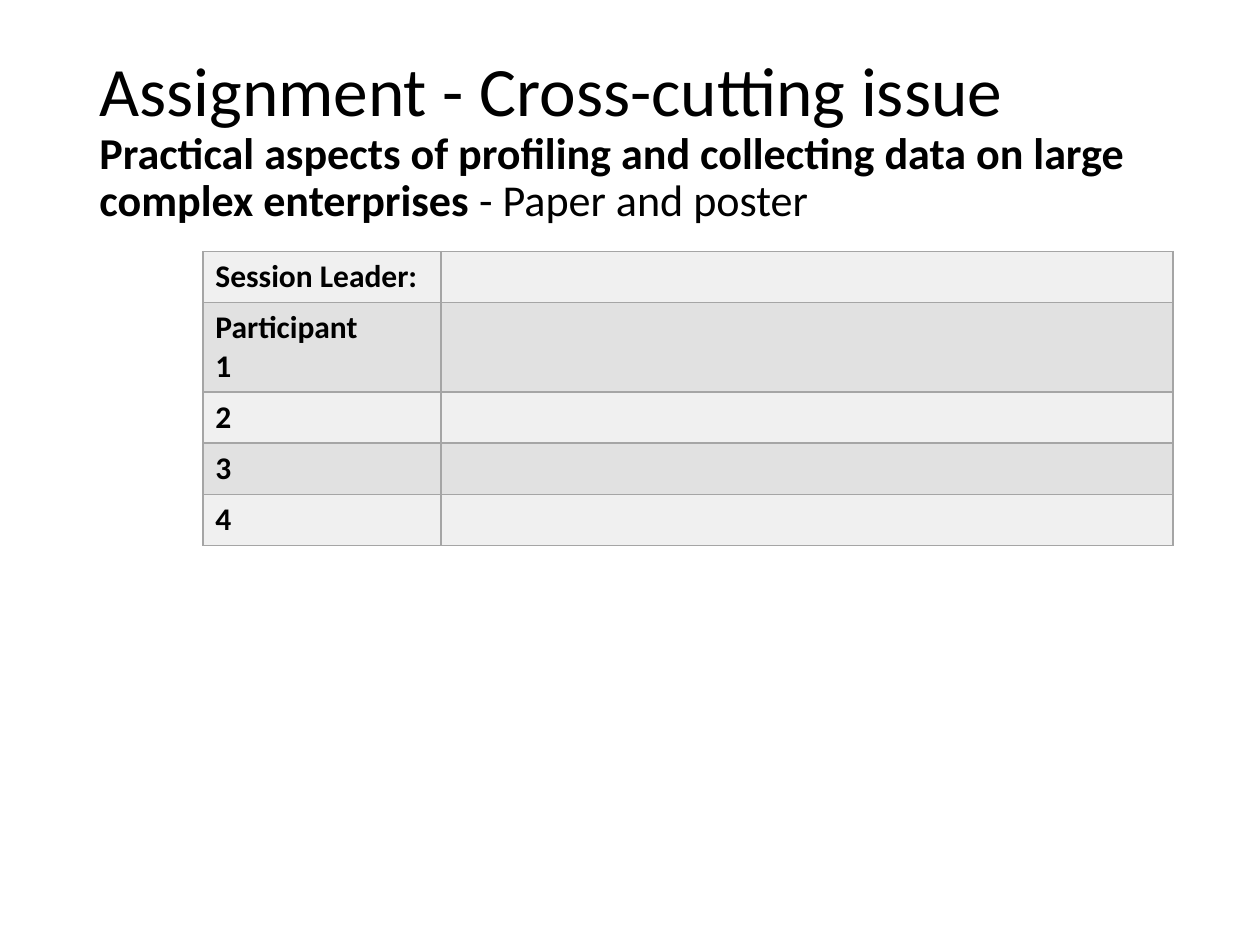
from dataclasses import dataclass

from lxml.etree import SubElement
from pptx import Presentation
from pptx.dml.color import RGBColor
from pptx.enum.text import MSO_ANCHOR, MSO_AUTO_SIZE, PP_ALIGN
from pptx.oxml.ns import qn
from pptx.util import Cm, Pt

FONT = "Calibri"
COLORS = {"text": "000000", "border": "A5A5A5", "light": "F0F0F0", "dark": "E1E1E1"}


@dataclass
class Row:
    label: list[str]
    height: float = 1.03


ROWS = [
    Row(["Session Leader:"]),
    Row(["Participant", "1"], 1.8),
    Row(["2"]),
    Row(["3"]),
    Row(["4"]),
]
COL_WIDTHS = [4.8, 14.76]


def set_font(font, size: float, bold: bool = False) -> None:
    font.name = FONT
    font.size = Pt(size)
    font.bold = bold
    font.color.rgb = RGBColor.from_string(COLORS["text"])


def add_borders(cell) -> None:
    tc_pr = cell._tc.get_or_add_tcPr()
    for side in ("lnL", "lnR", "lnT", "lnB"):
        ln = SubElement(tc_pr, qn(f"a:{side}"), w=str(Pt(1)))
        fill = SubElement(ln, qn("a:solidFill"))
        SubElement(fill, qn("a:srgbClr"), val=COLORS["border"])


def fill_title(s) -> None:
    title = s.shapes.title
    title.left, title.top, title.width, title.height = Cm(1.75), Cm(1.01), Cm(21.9), Cm(3.68)
    tf = title.text_frame
    tf.word_wrap = True
    tf.auto_size = MSO_AUTO_SIZE.NONE
    tf.vertical_anchor = MSO_ANCHOR.MIDDLE
    p = tf.paragraphs[0]
    p.alignment = PP_ALIGN.LEFT
    p.line_spacing = 0.9
    set_font(p.font, 39.6)
    p.add_run().text = "Assignment - Cross-cutting issue"
    p.add_line_break()
    for text, bold in (
        ("Practical aspects of profiling and collecting data on large complex enterprises ", True),
        ("- Paper and poster", False),
    ):
        r = p.add_run()
        r.text = text
        r.font.size = Pt(25.2)
        r.font.bold = bold


def add_participants(s, rows: list[Row]) -> None:
    table = s.shapes.add_table(
        len(rows), len(COL_WIDTHS), Cm(4.09), Cm(5.07),
        Cm(sum(COL_WIDTHS)), Cm(sum(row.height for row in rows)),
    ).table
    for column, width in zip(table.columns, COL_WIDTHS):
        column.width = Cm(width)
    for i, row in enumerate(rows):
        table.rows[i].height = Cm(row.height)
        shade = COLORS["dark" if i % 2 else "light"]
        for cell in table.rows[i].cells:
            add_borders(cell)
            cell.fill.solid()
            cell.fill.fore_color.rgb = RGBColor.from_string(shade)
        tf = table.cell(i, 0).text_frame
        tf.text = "\n".join(row.label)
        for p in tf.paragraphs:
            set_font(p.font, 18, bold=True)


def main() -> None:
    prs = Presentation()
    prs.slide_width, prs.slide_height = Cm(25.4), Cm(19.05)
    s = prs.slides.add_slide(prs.slide_layouts[5])  # title only
    fill_title(s)
    add_participants(s, ROWS)
    prs.save("out.pptx")


if __name__ == "__main__":
    main()
